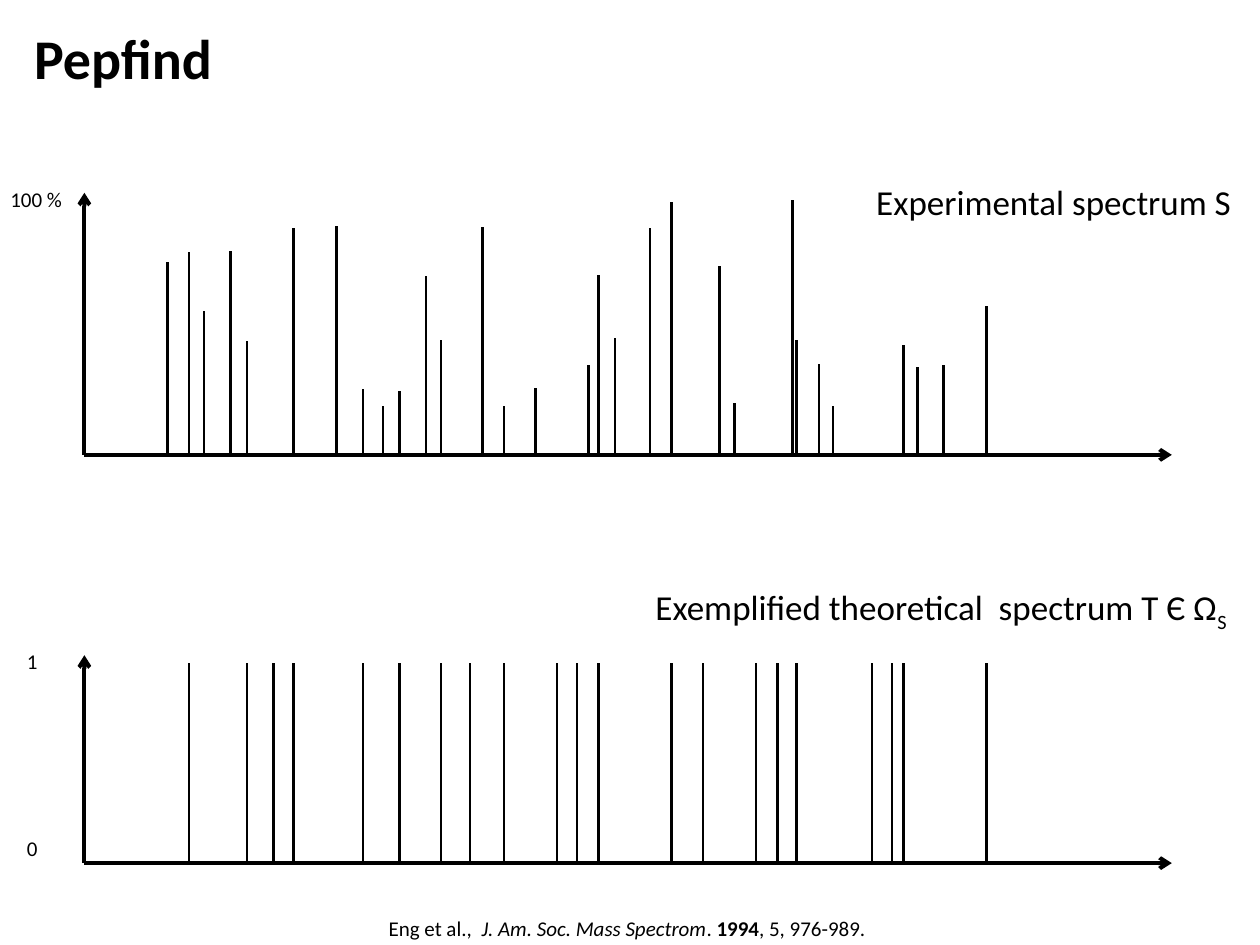
from lxml.etree import SubElement
from pptx import Presentation
from pptx.dml.color import RGBColor
from pptx.enum.shapes import MSO_CONNECTOR
from pptx.enum.text import MSO_ANCHOR, PP_ALIGN
from pptx.oxml.ns import qn
from pptx.util import Inches, Pt

BLACK = RGBColor(0, 0, 0)
FONT = "Calibri"

# Content: peaks are (position, height) in inches
TITLE = "Pepfind"
EXPERIMENTAL_PEAKS = [
    (1.33, 1.53), (1.5, 1.61), (1.62, 1.14), (1.83, 1.62), (1.96, 0.9),
    (2.33, 1.8), (2.67, 1.82), (2.88, 0.52), (3.04, 0.39), (3.17, 0.51),
    (3.38, 1.42), (3.5, 0.91), (3.83, 1.81), (4, 0.39), (4.25, 0.53),
    (4.67, 0.71), (4.75, 1.43), (4.88, 0.93), (5.16, 1.8), (5.33, 2.01),
    (5.71, 1.5), (5.83, 0.41), (6.29, 2.02), (6.32, 0.91), (6.5, 0.72),
    (6.61, 0.39), (7.17, 0.87), (7.28, 0.7), (7.49, 0.71), (7.83, 1.18),
]
THEORETICAL_POSITIONS = [
    1.5, 1.96, 2.17, 2.33, 2.88, 3.17, 3.5, 3.73, 4, 4.42, 4.58, 4.75,
    5.33, 5.58, 6, 6.17, 6.32, 6.92, 7.08, 7.17, 7.83,
]
THEORETICAL_PEAKS = [(position, 1.59) for position in THEORETICAL_POSITIONS]

# Spectra: baseline, axis top, peaks
SPECTRA = [
    (3.61, 1.53, EXPERIMENTAL_PEAKS),
    (6.85, 5.2, THEORETICAL_PEAKS),
]
AXIS_LEFT, AXIS_RIGHT = 0.67, 9.3

# Labels: left, top, width, height, size, alignment, runs of (text, style)
TICK_LEFT, TICK_WIDTH, CAPTION_RIGHT = -0.08, 0.67, 9.87
LABELS = [
    (TICK_LEFT, 1.43, TICK_WIDTH, 0.3, 12, PP_ALIGN.RIGHT, [("100 %", "")]),
    (TICK_LEFT, 5.1, TICK_WIDTH, 0.3, 12, PP_ALIGN.CENTER, [("1", "")]),
    (TICK_LEFT, 6.58, TICK_WIDTH, 0.3, 12, PP_ALIGN.CENTER, [("0", "")]),
    (CAPTION_RIGHT - 3.37, 1.38, 3.37, 0.44, 20, PP_ALIGN.RIGHT,
     [("Experimental spectrum S", "")]),
    (CAPTION_RIGHT - 5.45, 4.6, 5.45, 0.44, 20, PP_ALIGN.RIGHT,
     [("Exemplified theoretical  spectrum T Є Ω", ""), ("S ", "subscript")]),
    (1.79, 7.22, 6.41, 0.3, 12, PP_ALIGN.CENTER,
     [("Eng et al.,  ", ""), ("J. Am. Soc. Mass Spectrom", "italic"),
      (". ", ""), ("1994", "bold"), (", 5, 976-989. ", "")]),
]


def add_line(slide, start, end, width, arrow=False):
    line = slide.shapes.add_connector(
        MSO_CONNECTOR.STRAIGHT, *[Inches(v) for v in (*start, *end)])
    line.line.color.rgb = BLACK
    line.line.width = Pt(width)
    properties = line._element.spPr
    if arrow:
        SubElement(properties.find(qn("a:ln")), qn("a:tailEnd"), type="arrow")
    SubElement(properties, qn("a:effectLst"))


def set_font(paragraph, size):
    paragraph.font.name = FONT
    paragraph.font.size = Pt(size)
    paragraph.font.color.rgb = BLACK


def add_label(slide, left, top, width, height, size, alignment, runs):
    box = slide.shapes.add_textbox(*[Inches(v) for v in (left, top, width, height)])
    box.text_frame.word_wrap = True
    paragraph = box.text_frame.paragraphs[0]
    paragraph.alignment = alignment
    set_font(paragraph, size)
    for text, style in runs:
        run = paragraph.add_run()
        run.text = text
        if style == "italic":
            run.font.italic = True
        elif style == "bold":
            run.font.bold = True
        elif style == "subscript":
            run._r.get_or_add_rPr().set("baseline", "-25000")


def main():
    prs = Presentation()
    prs.slide_width, prs.slide_height = Inches(10), Inches(7.5)
    slide = prs.slides.add_slide(prs.slide_layouts[5])

    # Title
    title = slide.shapes.title
    title.left, title.top = Inches(0.17), Inches(0.08)
    title.width, title.height = Inches(7.33), Inches(0.75)
    title.text_frame.text = TITLE
    title.text_frame.vertical_anchor = MSO_ANCHOR.MIDDLE
    heading = title.text_frame.paragraphs[0]
    heading.alignment = PP_ALIGN.LEFT
    set_font(heading, 32)
    heading.font.bold = True

    # Axes and peaks
    for baseline, top, peaks in SPECTRA:
        origin = (AXIS_LEFT, baseline)
        add_line(slide, origin, (AXIS_RIGHT, baseline), 2.25, arrow=True)
        for position, height in peaks:
            add_line(slide, (position, baseline), (position, baseline - height), 1.5)
        add_line(slide, origin, (AXIS_LEFT, top), 2.25, arrow=True)

    # Tick labels, captions and reference
    for label in LABELS:
        add_label(slide, *label)

    prs.save("out.pptx")


if __name__ == "__main__":
    main()
